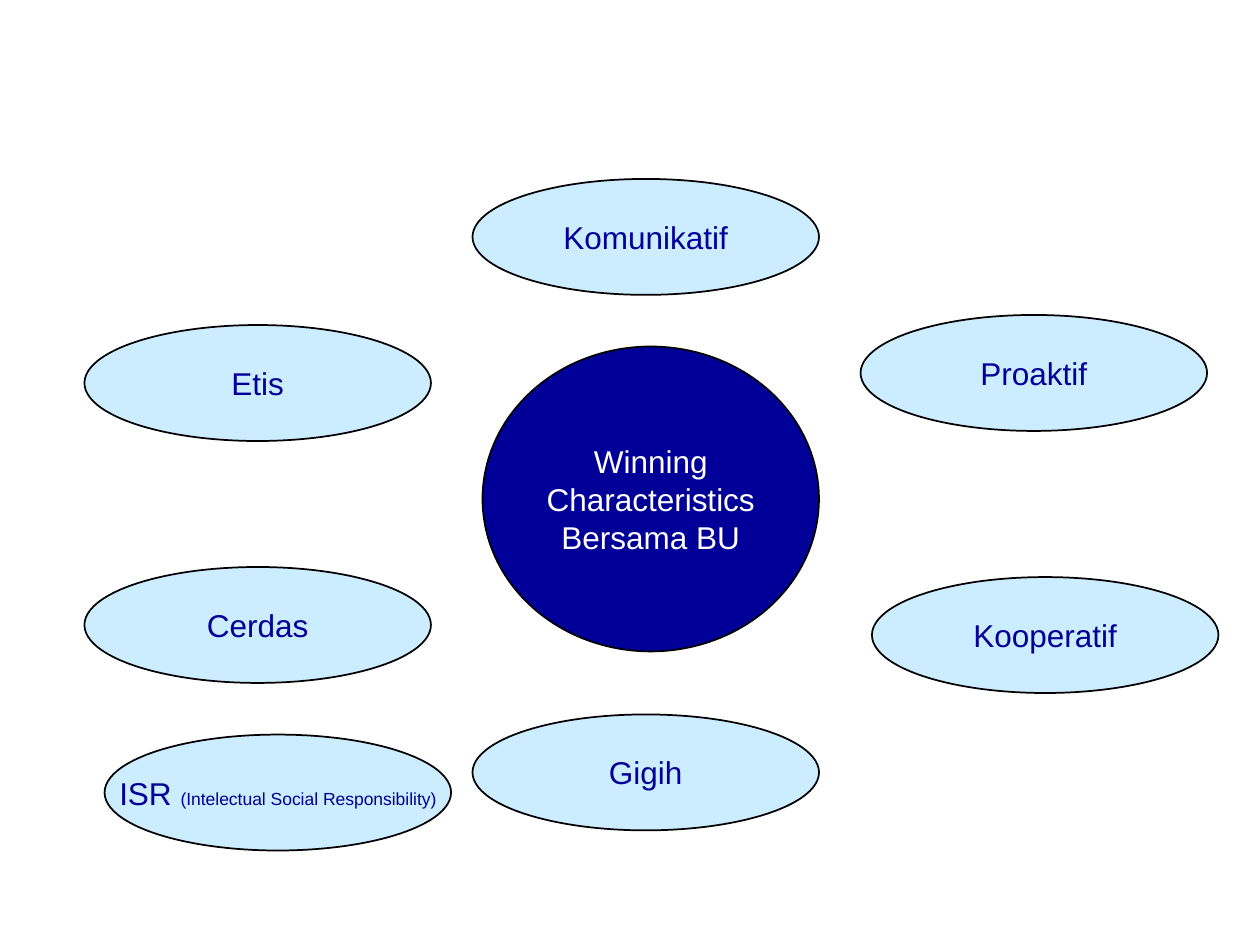
from pptx import Presentation
from pptx.dml.color import RGBColor
from pptx.enum.shapes import MSO_SHAPE
from pptx.enum.text import MSO_ANCHOR, PP_ALIGN
from pptx.util import Inches, Pt

NAVY = RGBColor(0x00, 0x00, 0x99)
SKY = RGBColor(0xCC, 0xEC, 0xFF)
BLACK = RGBColor(0x00, 0x00, 0x00)
WHITE = RGBColor(0xFF, 0xFF, 0xFF)

# Trait ellipses share one size: left, top, label
WIDTH, HEIGHT = 2.75, 0.92
TRAITS = [
    (3.75, 1.42, "Komunikatif"),
    (6.83, 2.5, "Proaktif"),
    (0.67, 2.58, "Etis"),
    (3.75, 5.67, "Gigih"),
    (0.67, 4.5, "Cerdas"),
    (6.92, 4.58, "Kooperatif"),
]


def add_text(para, text, size=18, color=NAVY):
    """Append a formatted run to a centred paragraph."""
    para.alignment = PP_ALIGN.CENTER
    run = para.add_run()
    run.text = text
    run.font.name = "Arial"
    run.font.size = Pt(size)
    run.font.color.rgb = color


def add_oval(slide, left, top, width=WIDTH, height=HEIGHT, fill=SKY):
    """Draw an outlined ellipse and return its text frame."""
    oval = slide.shapes.add_shape(
        MSO_SHAPE.OVAL, Inches(left), Inches(top), Inches(width), Inches(height))
    oval.shadow.inherit = False
    oval.fill.solid()
    oval.fill.fore_color.rgb = fill
    oval.line.color.rgb = BLACK
    oval.line.width = Pt(1)
    frame = oval.text_frame
    frame.word_wrap = False
    frame.vertical_anchor = MSO_ANCHOR.MIDDLE
    return frame


def add_hub(slide, lines):
    """Draw the central circle with one paragraph per line."""
    frame = add_oval(slide, 3.83, 2.75, width=2.67, height=2.42, fill=NAVY)
    for index, line in enumerate(lines):
        para = frame.add_paragraph() if index else frame.paragraphs[0]
        add_text(para, line, color=WHITE)


def main():
    deck = Presentation()
    deck.slide_width, deck.slide_height = Inches(10), Inches(7.5)
    slide = deck.slides.add_slide(deck.slide_layouts[6])

    # Traits around the centre
    for left, top, label in TRAITS:
        add_text(add_oval(slide, left, top).paragraphs[0], label)

    # Centre
    add_hub(slide, ["Winning", "Characteristics", "Bersama BU"])

    # Trait with a small explanation
    para = add_oval(slide, 0.83, 5.83).paragraphs[0]
    add_text(para, "ISR ")
    add_text(para, "(Intelectual Social Responsibility)", size=10)

    deck.save("out.pptx")


if __name__ == "__main__":
    main()
